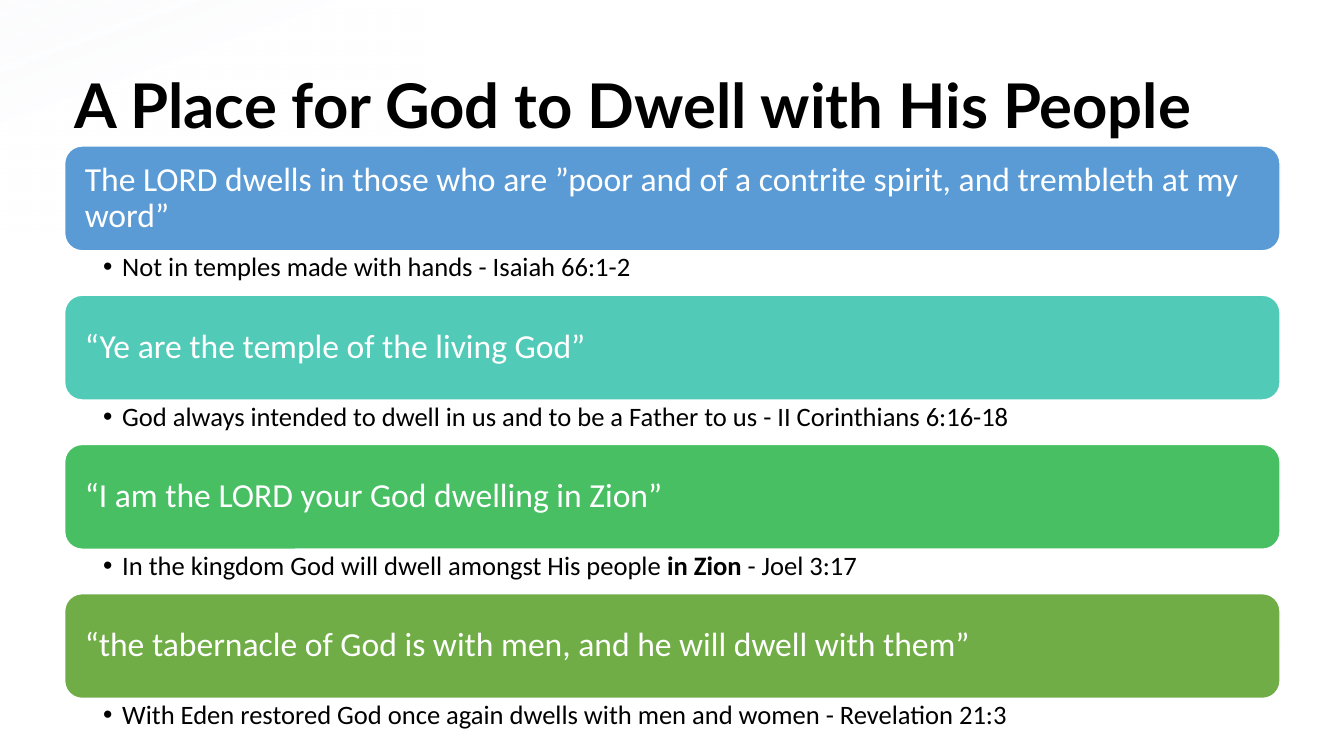
"""Build a slide of four coloured banners, each followed by a bulleted scripture note."""
from dataclasses import dataclass

from lxml import etree
from pptx import Presentation
from pptx import util as u
from pptx.dml.color import RGBColor
from pptx.enum import shapes, text
from pptx.oxml.ns import qn

COLOURS = {
    "ink": "000000",
    "paper": "FFFFFF",
    "mist": "F6F8FC",
    "blue": "5B9BD5",
    "teal": "52CAB8",
    "green": "49BF64",
    "olive": "70AD47",
}
LEFT, WIDTH = u.Cm(1.63), u.Cm(30.63)
FIRST_TOP, PITCH = u.Cm(3.68), u.Cm(3.76)
BANNER_HEIGHT, NOTE_HEIGHT = u.Cm(2.64), u.Cm(1.1)
GLOW_STOPS = [(0, "mist", 25), (34, "paper", 70), (53, "paper", 85), (67, "paper", 100)]


@dataclass
class Span:
    """A stretch of text with one weight."""

    words: str
    bold: bool = False


@dataclass
class Promise:
    """A banner statement and the note below it."""

    colour: str
    statement: str
    note: list[Span]


PROMISES = [
    Promise("blue",
            "The LORD dwells in those who are ”poor and of a contrite spirit, "
            "and trembleth at my word”",
            [Span("Not in temples made with hands - Isaiah 66:1-2")]),
    Promise("teal", "“Ye are the temple of the living God”",
            [Span("God always intended to dwell in us and to be a Father to us "
                  "- II Corinthians 6:16-18")]),
    Promise("green", "“I am the LORD your God dwelling in Zion”",
            [Span("In the kingdom God will dwell amongst His people "),
             Span("in Zion ", True), Span("- Joel 3:17")]),
    Promise("olive", "“the tabernacle of God is with men, and he will dwell with them”",
            [Span("With Eden restored God once again dwells with men and women "
                  "- Revelation 21:3")]),
]


def rgb(name: str) -> RGBColor:
    """Look up a named colour."""
    return RGBColor.from_string(COLOURS[name])


def place(box, left: int, top: int, width: int, height: int) -> None:
    """Move and size a placeholder."""
    box.left, box.top, box.width, box.height = left, top, width, height


def write(box, spans: list[Span], font: str, size: float, colour: str,
          anchor: text.MSO_ANCHOR, insets: tuple[float, float, float, float]):
    """Fill a box with one left-aligned paragraph and return that paragraph."""
    frame = box.text_frame
    frame.word_wrap = True
    frame.auto_size = text.MSO_AUTO_SIZE.NONE
    frame.vertical_anchor = anchor
    (frame.margin_left, frame.margin_top,
     frame.margin_right, frame.margin_bottom) = map(u.Cm, insets)
    para = frame.paragraphs[0]
    para.alignment = text.PP_ALIGN.LEFT
    para.line_spacing = 0.9
    para.space_before = u.Pt(0)
    for span in spans:
        run = para.add_run()
        run.text = span.words
        run.font.name = font
        run.font.size = u.Pt(size)
        run.font.bold = span.bold
        run.font.color.rgb = rgb(colour)
    return para


def add_bullet(para) -> None:
    """Give a paragraph a hanging round bullet."""
    properties = para._p.get_or_add_pPr()
    properties.set("marL", str(u.Cm(0.48)))
    properties.set("indent", str(-u.Cm(0.48)))
    etree.SubElement(properties, qn("a:buFont"), typeface="Arial")
    etree.SubElement(properties, qn("a:buChar"), char="•")


def add_glow(page) -> None:
    """Lay a faint gradient behind the top left corner."""
    glow = page.shapes.add_shape(shapes.MSO_SHAPE.RECTANGLE, 0, 0, u.Cm(10.67), u.Cm(6.02))
    glow.shadow.inherit = False
    glow.line.fill.background()
    glow.fill.gradient()
    glow.fill.gradient_angle = 290
    stops = glow.element.find(".//" + qn("a:gsLst"))
    for stop in list(stops):
        stops.remove(stop)
    for position, colour, opacity in GLOW_STOPS:
        stop = etree.SubElement(stops, qn("a:gs"), pos=str(position * 1000))
        shade = etree.SubElement(stop, qn("a:srgbClr"), val=COLOURS[colour])
        etree.SubElement(shade, qn("a:alpha"), val=str(opacity * 1000))
    page.shapes.element.insert(2, glow.element)


def add_promise(page, note_box, promise: Promise, top: int) -> None:
    """Draw a banner and set its note below."""
    banner = page.shapes.add_shape(
        shapes.MSO_SHAPE.ROUNDED_RECTANGLE, LEFT, top, WIDTH, BANNER_HEIGHT)
    banner.shadow.inherit = False
    banner.fill.solid()
    banner.fill.fore_color.rgb = rgb(promise.colour)
    banner.line.color.rgb = rgb("paper")
    banner.line.width = u.Pt(1)
    write(banner, [Span(promise.statement)], "Calibri", 24, "paper",
          text.MSO_ANCHOR.MIDDLE, (0.38, 0.38, 0.38, 0.38))

    place(note_box, LEFT, top + BANNER_HEIGHT, WIDTH, NOTE_HEIGHT)
    para = write(note_box, promise.note, "Calibri", 19, "ink",
                 text.MSO_ANCHOR.TOP, (0.97, 0.08, 0.48, 0.08))
    add_bullet(para)


def main() -> None:
    """Build and save the deck."""
    deck = Presentation()
    deck.slide_width, deck.slide_height = u.Cm(33.87), u.Cm(19.05)
    page = deck.slides.add_slide(deck.slide_layouts.get_by_name("Comparison"))
    title, *note_boxes = page.placeholders
    add_glow(page)
    place(title, LEFT, u.Cm(0.89), WIDTH, u.Cm(3.68))
    write(title, [Span("A Place for God to Dwell with His People", True)], "Lato", 44, "ink",
          text.MSO_ANCHOR.MIDDLE, (0.25, 0.13, 0.25, 0.13))
    for row, (note_box, promise) in enumerate(zip(note_boxes, PROMISES)):
        add_promise(page, note_box, promise, FIRST_TOP + row * PITCH)
    deck.save("out.pptx")


if __name__ == "__main__":
    main()
